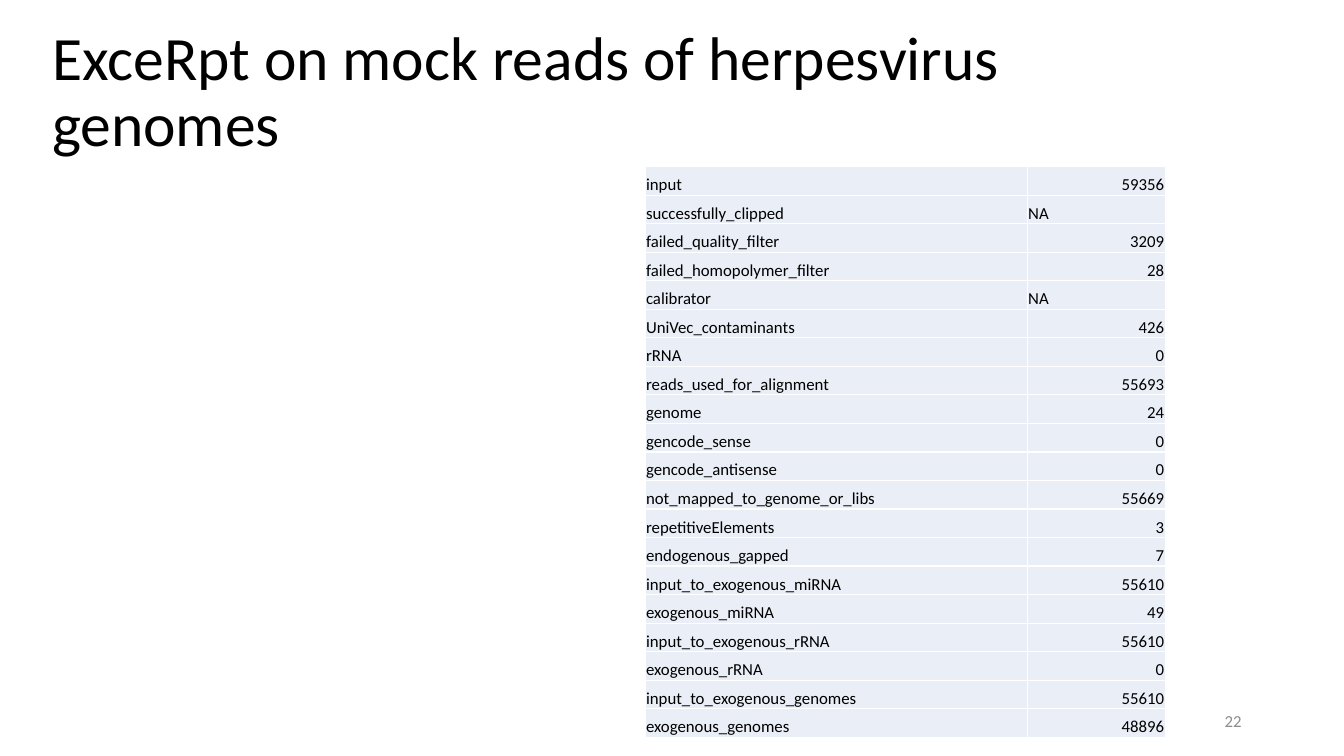
import pptx
import pptx.util
import pptx.dml.color
import pptx.enum.text
import pptx.oxml
import pptx.oxml.ns

Pt = pptx.util.Pt
Align = pptx.enum.text.PP_ALIGN
Anchor = pptx.enum.text.MSO_ANCHOR

COUNTS = [
    ("input", "59356"),
    ("successfully_clipped", "NA"),
    ("failed_quality_filter", "3209"),
    ("failed_homopolymer_filter", "28"),
    ("calibrator", "NA"),
    ("UniVec_contaminants", "426"),
    ("rRNA", "0"),
    ("reads_used_for_alignment", "55693"),
    ("genome", "24"),
    ("gencode_sense", "0"),
    ("gencode_antisense", "0"),
    ("not_mapped_to_genome_or_libs", "55669"),
    ("repetitiveElements", "3"),
    ("endogenous_gapped", "7"),
    ("input_to_exogenous_miRNA", "55610"),
    ("exogenous_miRNA", "49"),
    ("input_to_exogenous_rRNA", "55610"),
    ("exogenous_rRNA", "0"),
    ("input_to_exogenous_genomes", "55610"),
    ("exogenous_genomes", "48896"),
]


def color(code):
    return pptx.dml.color.RGBColor.from_string(code)


def style(para, size, code, align=Align.LEFT):
    para.alignment = align
    para.font.name = "Calibri"
    para.font.size = Pt(size)
    para.font.color.rgb = color(code)


def border(cell, code, width):
    props = cell._tc.get_or_add_tcPr()
    space = pptx.oxml.ns.nsdecls("a")
    for side in "LRTB":
        props.append(pptx.oxml.parse_xml(
            f'<a:ln{side} {space} w="{Pt(width)}"><a:solidFill>'
            f'<a:srgbClr val="{code}"/></a:solidFill></a:ln{side}>'))


def add_title(slide, text, left, top, width, height):
    title = slide.shapes.title
    title.left, title.top = Pt(left), Pt(top)
    title.width, title.height = Pt(width), Pt(height)
    frame = title.text_frame
    frame.text = text
    frame.word_wrap = True
    frame.auto_size = pptx.enum.text.MSO_AUTO_SIZE.NONE
    frame.vertical_anchor = Anchor.MIDDLE
    para = frame.paragraphs[0]
    para.line_spacing = 0.9
    style(para, 44, "000000")


def fill_cell(cell, text, align):
    cell.text = text
    cell.vertical_anchor = Anchor.BOTTOM
    cell.margin_left = cell.margin_right = cell.margin_top = Pt(0.7)
    cell.margin_bottom = Pt(0)
    border(cell, "FFFFFF", 1)
    cell.fill.solid()
    cell.fill.fore_color.rgb = color("EAEFF7")
    style(cell.text_frame.paragraphs[0], 12, "000000", align)


def add_counts(slide, left, top, width, height):
    table = slide.shapes.add_table(
        len(COUNTS), 2, Pt(left), Pt(top), Pt(width), Pt(height)).table
    table.first_row = table.horz_banding = False
    names = 273
    table.columns[0].width = Pt(names)
    table.columns[1].width = Pt(width - names)
    for row, (name, count) in enumerate(COUNTS):
        table.rows[row].height = Pt(height / len(COUNTS))
        fill_cell(table.cell(row, 0), name, Align.LEFT)
        align = Align.RIGHT if count.isdigit() else Align.LEFT
        fill_cell(table.cell(row, 1), count, align)


def add_number(slide, text, left, top, width, height):
    box = slide.shapes.add_textbox(Pt(left), Pt(top), Pt(width), Pt(height))
    frame = box.text_frame
    frame.word_wrap = True
    frame.vertical_anchor = Anchor.MIDDLE
    frame.text = text
    style(frame.paragraphs[0], 12, "8C8C8C", Align.RIGHT)


def main():
    deck = pptx.Presentation()
    deck.slide_width, deck.slide_height = Pt(960), Pt(540)
    slide = deck.slides.add_slide(deck.slide_layouts.get_by_name("Title Only"))
    add_title(slide, "ExceRpt on mock reads of herpesvirus genomes",
              30, 14.5, 860, 104.4)
    add_counts(slide, 460.8, 119, 371.5, 408)
    add_number(slide, "22", 678, 500.5, 216, 28.75)
    deck.save("out.pptx")


if __name__ == "__main__":
    main()
